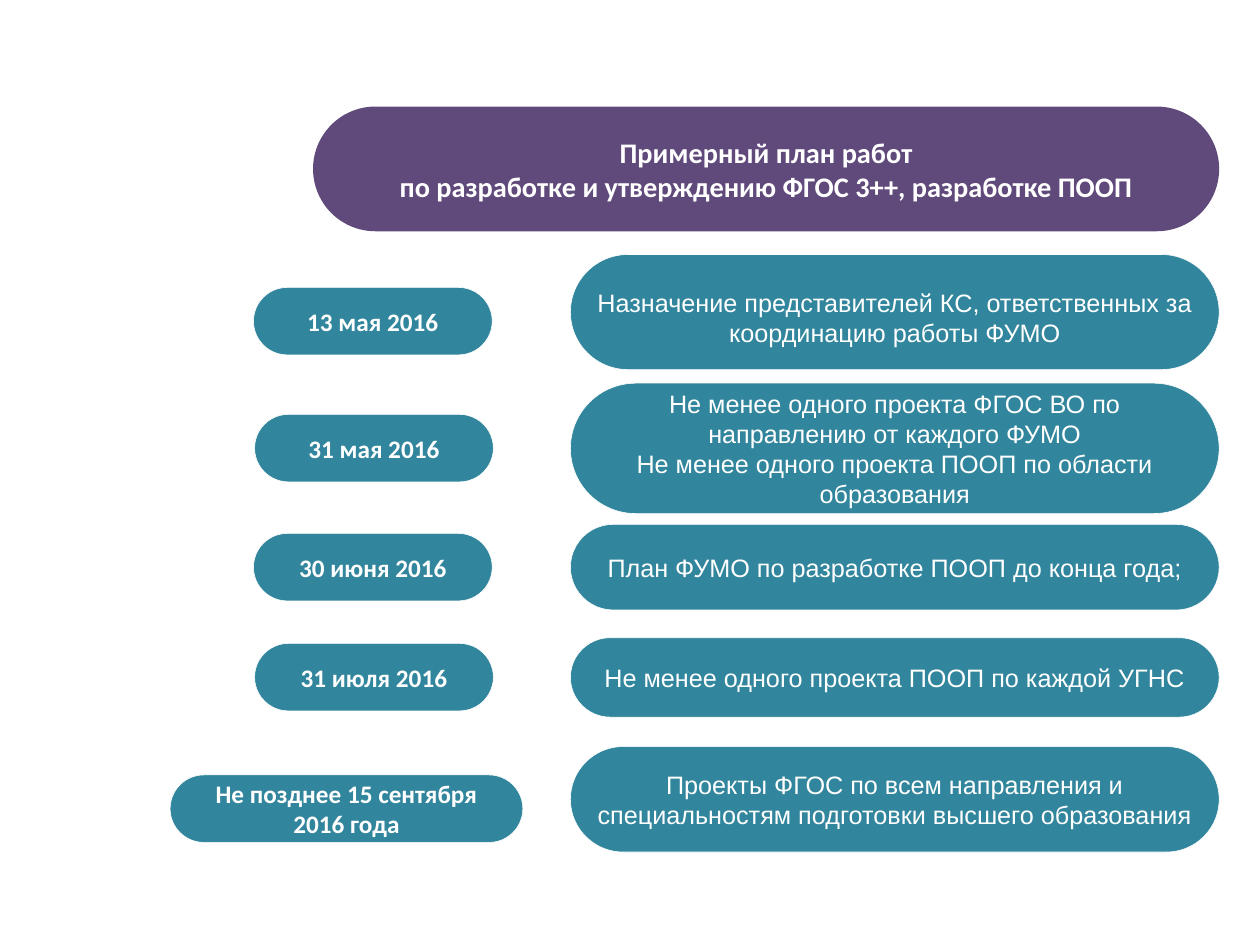
from pptx import Presentation
from pptx.dml.color import RGBColor
from pptx.enum.shapes import MSO_SHAPE as Shape
from pptx.enum.text import MSO_ANCHOR as Anchor, MSO_AUTO_SIZE as Fit, PP_ALIGN as Align
from pptx.util import Pt

PX = 9144
PLUM, TEAL, WHITE = "604A7B", "31859C", "FFFFFF"
HEAD = ["Примерный план работ", "по разработке и утверждению ФГОС 3++, разработке ПООП"]
ROWS = [
    (["13 мая 2016"], (447, 507, 421),
     ["Назначение представителей КС, ответственных за координацию работы ФУМО"],
     (449, 203), 24),
    (["31 мая 2016"], (449, 731, 421),
     ["Не менее одного проекта ФГОС ВО по направлению от каждого ФУМО",
      "Не менее одного проекта ПООП по области образования"], (676, 230), 5),
    (["30 июня 2016"], (447, 941, 421),
     ["План ФУМО по разработке ПООП до конца года;"], (925, 151), 5),
    (["31 июля 2016"], (449, 1135, 421),
     ["Не менее одного проекта ПООП по каждой УГНС"], (1125, 140), 5),
    (["Не позднее 15 сентября", "2016 года"], (300, 1367, 622),
     ["Проекты ФГОС по всем направления и специальностям подготовки высшего образования"],
     (1317, 186), 5),
]


def tint(code):
    return RGBColor.from_string(code)


class Deck:
    """Holds the style and the current slide of the work plan."""

    def __init__(self, width, height):
        self.show = Presentation()
        self.show.slide_width, self.show.slide_height = width * PX, height * PX
        self.slide = self.show.slides.add_slide(self.show.slide_layouts[5])

    def label(self, frame, lines, size, face, bold, top=5):
        frame.word_wrap = True
        frame.auto_size = Fit.NONE
        frame.vertical_anchor = Anchor.MIDDLE
        frame.margin_left = frame.margin_right = 10 * PX
        frame.margin_top, frame.margin_bottom = top * PX, 5 * PX
        frame.text = "\n".join(lines)
        for para in frame.paragraphs:
            para.alignment = Align.CENTER
            font = para.font
            font.size, font.name, font.bold = Pt(size), face, bold
            font.color.rgb = tint(WHITE)

    def pill(self, box, fill, edge=None):
        shape = self.slide.shapes.add_shape(
            Shape.ROUNDED_RECTANGLE, *(side * PX for side in box))
        shape.adjustments[0] = 0.5
        shape.shadow.inherit = False
        shape.fill.solid()
        shape.fill.fore_color.rgb = tint(fill)
        if edge:
            shape.line.color.rgb = tint(edge)
            shape.line.width = Pt(0.75)
        else:
            shape.line.fill.background()
        return shape

    def title(self, box, lines):
        self.pill(box, PLUM)
        head = self.slide.shapes.title
        head.left, head.top, head.width, head.height = (side * PX for side in box)
        self.slide.shapes._spTree.append(head._element)
        self.label(head.text_frame, lines, 36, "Calibri", True)

    def date(self, box, lines):
        shape = self.pill(box, TEAL, WHITE)
        self.label(shape.text_frame, lines, 32, "Calibri", True)

    def task(self, box, lines, top):
        shape = self.pill(box, TEAL, WHITE)
        self.label(shape.text_frame, lines, 32, "Arial", False, top)


def main():
    deck = Deck(2222, 1667)
    deck.title((552, 188, 1598, 220), HEAD)
    for date, spot, task, (top, height), inset in ROWS:
        deck.date((*spot, 119), date)
        deck.task((1006, top, 1144, height), task, inset)
    deck.show.save("out.pptx")


if __name__ == "__main__":
    main()
